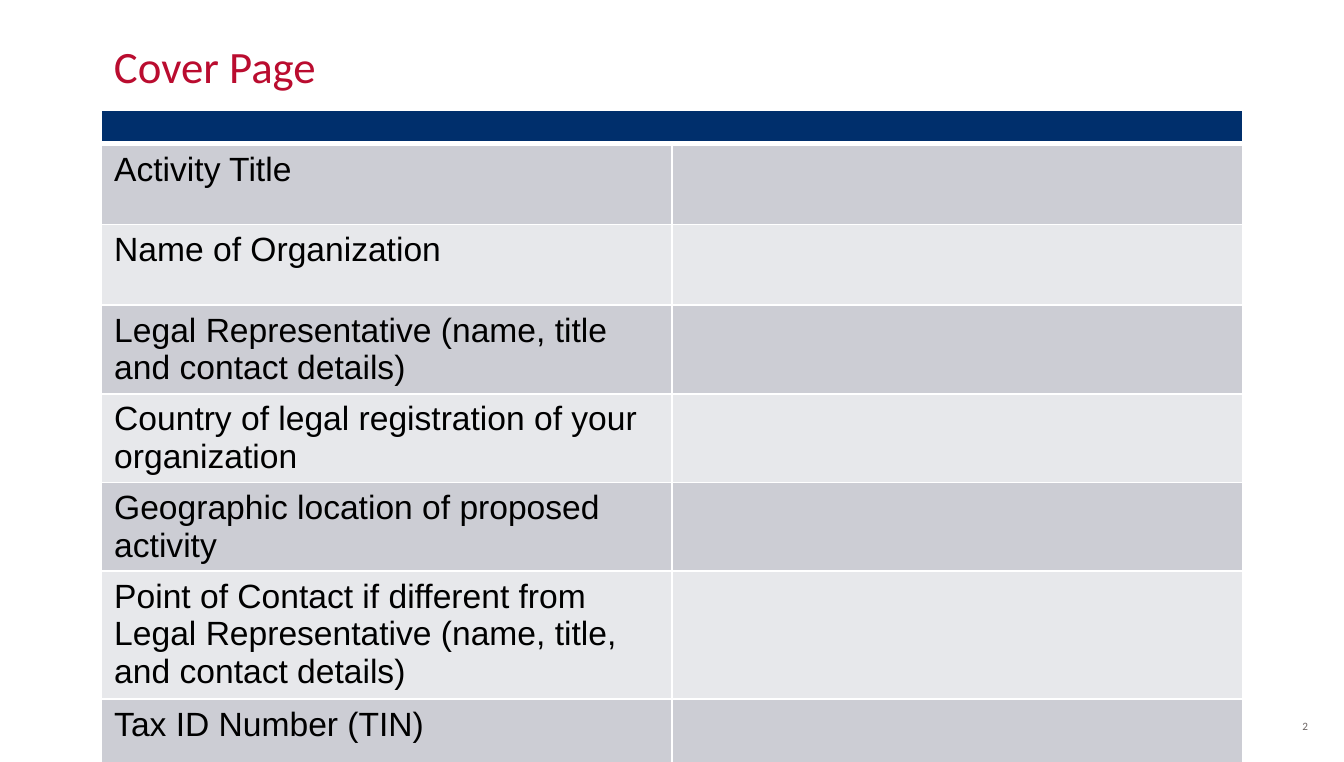
from lxml import etree
from pptx import Presentation
from pptx.dml.color import RGBColor
from pptx.enum.text import MSO_ANCHOR, PP_ALIGN
from pptx.oxml.ns import qn
from pptx.util import Inches, Pt

SLIDE_W, SLIDE_H = Inches(10), Inches(5.67)
LEFT, CONTENT_W = Inches(0.75), Inches(8.5)
HEADER_H, MIN_ROW_H = Inches(0.25), Inches(0.6)
LINE_H, ROW_PADDING = Inches(0.28), Inches(0.1)

MIDDLE, BOTTOM = MSO_ANCHOR.MIDDLE, MSO_ANCHOR.BOTTOM
ALIGN_LEFT, ALIGN_RIGHT = PP_ALIGN.LEFT, PP_ALIGN.RIGHT

RED = RGBColor(0xBA, 0x0C, 0x2F)
NAVY = RGBColor(0x00, 0x2F, 0x6C)
GREY = RGBColor(0x6C, 0x64, 0x63)
BLACK = RGBColor(0x00, 0x00, 0x00)
WHITE = RGBColor(0xFF, 0xFF, 0xFF)
BANDS = (RGBColor(0xCC, 0xCD, 0xD4), RGBColor(0xE7, 0xE8, 0xEB))

# Each field with the number of lines it fills
FIELDS = (
    ("Activity Title", 1),
    ("Name of Organization", 1),
    ("Legal Representative (name, title and contact details)", 2),
    ("Country of legal registration of your organization", 2),
    ("Geographic location of proposed activity", 2),
    ("Point of Contact if different from Legal Representative (name, title, and contact details)", 3),
    ("Tax ID Number (TIN)", 1),
)


def add_run(paragraph, text, font, size, color):
    run = paragraph.add_run()
    run.text = text
    run.font.name, run.font.size = font, Pt(size)
    run.font.color.rgb = color


def add_label(slide, box, text, size, color, anchor, align):
    frame = slide.shapes.add_textbox(*box).text_frame
    frame.word_wrap = True
    frame.vertical_anchor = anchor
    paragraph = frame.paragraphs[0]
    paragraph.alignment = align
    add_run(paragraph, text, "Calibri", size, color)


def style_cell(cell, color, top=1, bottom=1):
    """Give the cell white borders (widths in points), a solid fill and no bottom margin."""
    properties = cell._tc.get_or_add_tcPr()
    for side, width in (("L", 1), ("R", 1), ("T", top), ("B", bottom)):
        line = etree.SubElement(properties, qn(f"a:ln{side}"), w=str(Pt(width)))
        fill = etree.SubElement(line, qn("a:solidFill"))
        etree.SubElement(fill, qn("a:srgbClr"), val=str(WHITE))
    cell.fill.solid()
    cell.fill.fore_color.rgb = color
    cell.margin_bottom = 0


def set_empty_size(cell, size):
    """Set the text size of a cell without text, so that its row can stay low."""
    etree.SubElement(cell.text_frame.paragraphs[0]._p, qn("a:endParaRPr"), sz=str(size * 100))


def add_form(slide, left, top, width, fields):
    row_heights = [max(MIN_ROW_H, ROW_PADDING + LINE_H * lines) for _, lines in fields]
    height = HEADER_H + sum(row_heights)
    table = slide.shapes.add_table(len(fields) + 1, 2, left, top, width, height).table
    table.horz_banding = False
    for column in table.columns:
        column.width = width // 2

    table.rows[0].height = HEADER_H
    for cell in table.rows[0].cells:
        style_cell(cell, NAVY, bottom=3)
        set_empty_size(cell, 8)
    table.cell(0, 0).merge(table.cell(0, 1))

    for index, (field, _) in enumerate(fields):
        row = table.rows[index + 1]
        row.height = row_heights[index]
        label, answer = row.cells
        for cell in (label, answer):
            style_cell(cell, BANDS[index % 2], top=1 if index else 3)
        add_run(label.text_frame.paragraphs[0], field, "Arial", 18, BLACK)
        set_empty_size(label, 18)
        set_empty_size(answer, 18)


def main():
    deck = Presentation()
    deck.slide_width, deck.slide_height = SLIDE_W, SLIDE_H
    slide = deck.slides.add_slide(deck.slide_layouts[6])
    add_label(slide, (Inches(7.5), Inches(5.3), Inches(2.33), Inches(0.2)),
              "2", 6, GREY, MIDDLE, ALIGN_RIGHT)
    add_label(slide, (LEFT, Inches(0.24), CONTENT_W, Inches(0.5)),
              "Cover Page", 24, RED, BOTTOM, ALIGN_LEFT)
    add_form(slide, LEFT, Inches(0.82), CONTENT_W, FIELDS)
    deck.save("out.pptx")


if __name__ == "__main__":
    main()
